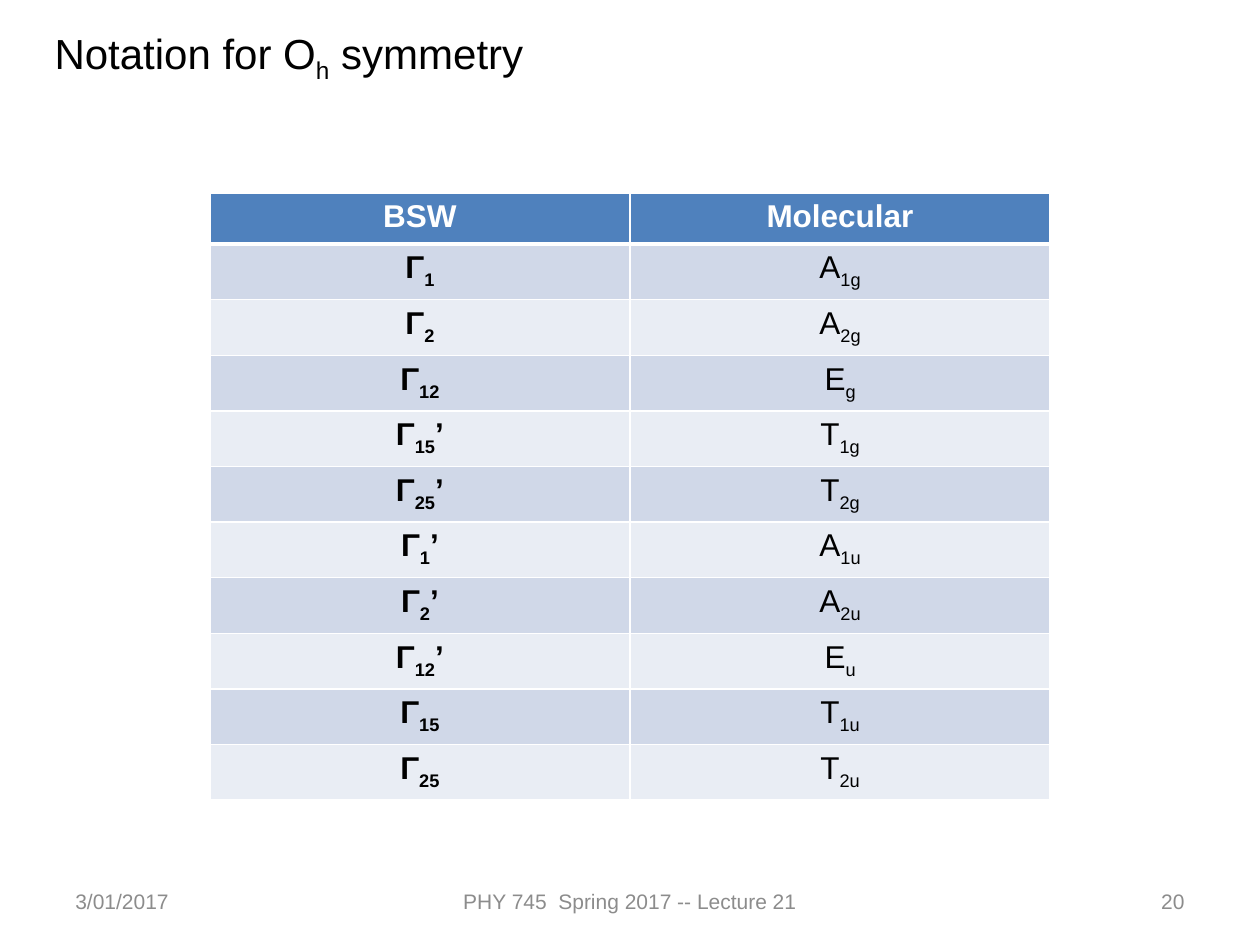
from lxml import etree
from pptx import Presentation
from pptx.dml.color import RGBColor
from pptx.enum.text import MSO_ANCHOR, PP_ALIGN
from pptx.oxml.ns import qn
from pptx.util import Cm, Pt

LEFT, CENTER, RIGHT = PP_ALIGN.LEFT, PP_ALIGN.CENTER, PP_ALIGN.RIGHT
TOP, MIDDLE = MSO_ANCHOR.TOP, MSO_ANCHOR.MIDDLE
BLACK = RGBColor(0x00, 0x00, 0x00)
WHITE = RGBColor(0xFF, 0xFF, 0xFF)
GRAY = RGBColor(0x8C, 0x8C, 0x8C)
BLUE = RGBColor(0x4F, 0x81, 0xBD)
BANDS = [RGBColor(0xE9, 0xED, 0xF4), RGBColor(0xD0, 0xD8, 0xE8)]

# Text between underscores is set as a subscript.
TITLE = "Notation for O_h_ symmetry"
FOOTERS = [
    ("3/01/2017", 1.27, 5.93, LEFT),
    ("PHY 745  Spring 2017 -- Lecture 21", 8.68, 8.04, CENTER),
    ("20", 18.2, 5.93, RIGHT),
]
ROWS = [
    ("BSW", "Molecular"),
    ("Γ_1_", "A_1g_"),
    ("Γ_2_", "A_2g_"),
    ("Γ_12_", "E_g_"),
    ("Γ_15_’", "T_1g_"),
    ("Γ_25_’", "T_2g_"),
    ("Γ_1_’", "A_1u_"),
    ("Γ_2_’", "A_2u_"),
    ("Γ_12_’", "E_u_"),
    ("Γ_15_", "T_1u_"),
    ("Γ_25_", "T_2u_"),
]
COL_W, ROW_H = 8.47, 1.03


def write(tf, text, size, color, align=LEFT, bold=False):
    p = tf.paragraphs[0]
    p.alignment = align
    for i, part in enumerate(text.split("_")):
        if not part:
            continue
        r = p.add_run()
        r.text = part
        r.font.name = "Arial"
        r.font.size = Pt(size)
        r.font.bold = bold
        r.font.color.rgb = color
        if i % 2:
            r._r.get_or_add_rPr().set("baseline", "-25000")


def add_text(s, box, text, size, color, align=LEFT, anchor=TOP):
    tf = s.shapes.add_textbox(*map(Cm, box)).text_frame
    tf.word_wrap = True
    tf.vertical_anchor = anchor
    write(tf, text, size, color, align)


def set_borders(cell, top, bottom):
    tcPr = cell._tc.get_or_add_tcPr()
    for side, width in (("L", 1), ("R", 1), ("T", top), ("B", bottom)):
        ln = etree.SubElement(tcPr, qn("a:ln" + side), w=str(Pt(width)))
        fill = etree.SubElement(ln, qn("a:solidFill"))
        etree.SubElement(fill, qn("a:srgbClr"), val=str(WHITE))


def add_notation_table(s):
    cols = len(ROWS[0])
    table = s.shapes.add_table(len(ROWS), cols, Cm(4.23), Cm(3.89),
                               Cm(COL_W * cols), Cm(ROW_H * len(ROWS))).table
    for col in table.columns:
        col.width = Cm(COL_W)
    for i, row in enumerate(ROWS):
        table.rows[i].height = Cm(ROW_H)
        header = i == 0
        for j, text in enumerate(row):
            cell = table.cell(i, j)
            set_borders(cell, 3 if i == 1 else 1, 3 if header else 1)
            cell.fill.solid()
            cell.fill.fore_color.rgb = BLUE if header else BANDS[i % 2]
            write(cell.text_frame, text, 18, WHITE if header else BLACK,
                  CENTER, bold=header or j == 0)


def main():
    prs = Presentation()
    prs.slide_width, prs.slide_height = Cm(25.4), Cm(19.05)
    s = prs.slides.add_slide(prs.slide_layouts[6])
    for text, left, width, align in FOOTERS:
        add_text(s, (left, 17.66, width, 1.01), text, 12, GRAY, align, MIDDLE)
    add_text(s, (0.85, 0.42, 20.96, 1.28), TITLE, 24, BLACK)
    add_notation_table(s)
    prs.save("out.pptx")


if __name__ == "__main__":
    main()
